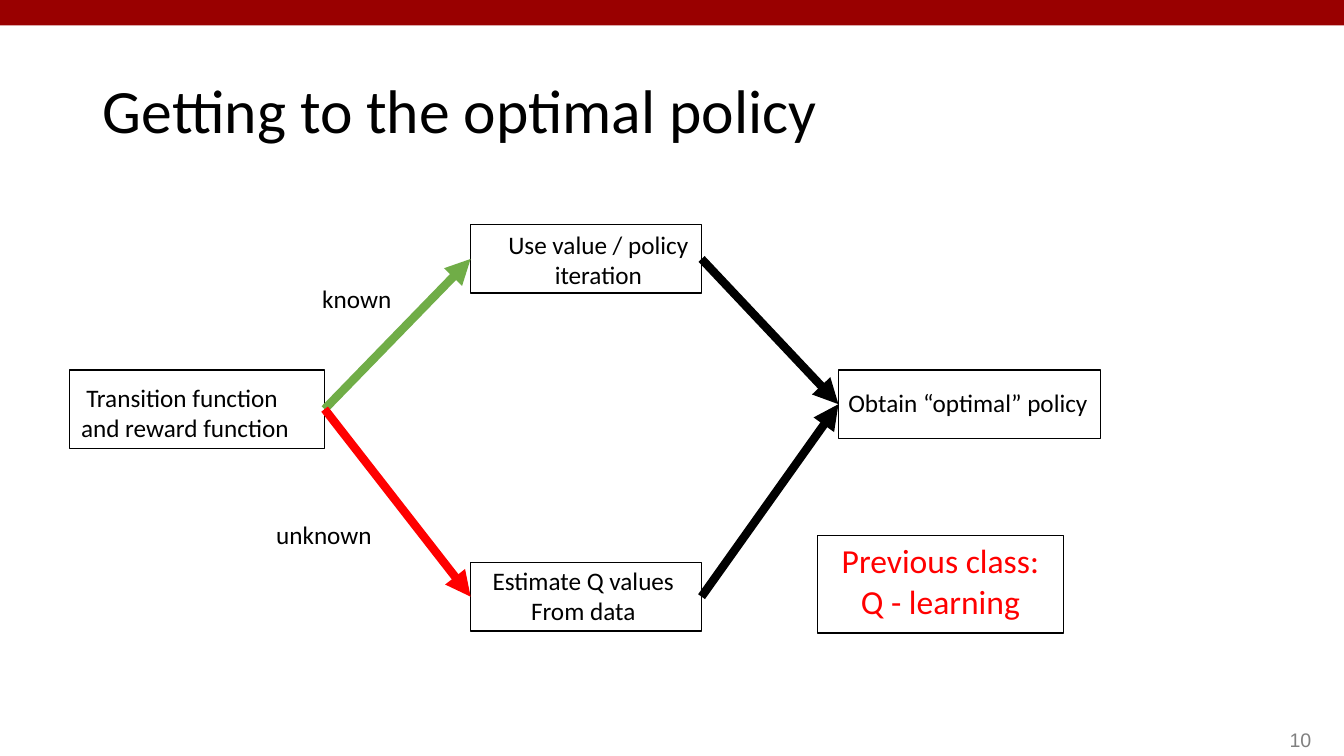
from lxml.etree import SubElement
from pptx import Presentation
from pptx.dml.color import RGBColor
from pptx.enum.shapes import MSO_CONNECTOR, MSO_SHAPE
from pptx.enum.text import MSO_ANCHOR, PP_ALIGN
from pptx.oxml.ns import qn
from pptx.util import Cm, Pt

BLACK = "000000"
RED = "FF0000"
GREEN = "70AD47"
LEFT_SITE, RIGHT_SITE = 1, 3


def colour(value):
    return RGBColor.from_string(value)


class FlowSlide:
    font = "Calibri"

    def __init__(self, deck):
        self.page = deck.slides.add_slide(deck.slide_layouts[5])

    def fill_text(self, box, text, size, ink, align, font=None):
        frame = box.text_frame
        frame.text = text
        for para in frame.paragraphs:
            para.alignment = align
            for span in para.runs:
                span.font.name = font or self.font
                span.font.size = Pt(size)
                span.font.color.rgb = colour(ink)
        return frame

    def title(self, text, left, top, width, height):
        box = self.page.shapes.title
        box.left, box.top, box.width, box.height = map(Cm, (left, top, width, height))
        frame = self.fill_text(box, text, 44, BLACK, PP_ALIGN.LEFT)
        frame.vertical_anchor = MSO_ANCHOR.MIDDLE
        frame.paragraphs[0].line_spacing = 0.9

    def rectangle(self, left, top, width, height):
        box = self.page.shapes.add_shape(
            MSO_SHAPE.RECTANGLE, *map(Cm, (left, top, width, height)))
        box.shadow.inherit = False
        return box

    def band(self, fill, *place):
        box = self.rectangle(*place)
        box.fill.solid()
        box.fill.fore_color.rgb = colour(fill)
        box.line.fill.background()

    def outline(self, *place):
        box = self.rectangle(*place)
        box.fill.background()
        box.line.color.rgb = colour(BLACK)
        box.line.width = Pt(1)
        return box

    def label(self, text, left, top, width, height, size=18, ink=BLACK,
              align=PP_ALIGN.CENTER, anchor=MSO_ANCHOR.TOP, wrap=False, font=None):
        box = self.page.shapes.add_textbox(*map(Cm, (left, top, width, height)))
        frame = self.fill_text(box, text, size, ink, align, font)
        frame.word_wrap = wrap
        frame.vertical_anchor = anchor

    def arrow(self, source, target, ink):
        connector = self.page.shapes.add_connector(MSO_CONNECTOR.STRAIGHT, 0, 0, 0, 0)
        connector.begin_connect(source, RIGHT_SITE)
        connector.end_connect(target, LEFT_SITE)
        connector.line.color.rgb = colour(ink)
        connector.line.width = Pt(6)
        properties = connector._element.spPr
        SubElement(properties.find(qn("a:ln")), qn("a:tailEnd"), type="triangle")
        SubElement(properties, qn("a:effectLst"))


def main():
    deck = Presentation()
    deck.slide_width, deck.slide_height = Cm(33.87), Cm(19.05)
    slide = FlowSlide(deck)

    slide.band("990000", 0, 0, 33.87, 0.64)
    slide.title("Getting to the optimal policy", 2.34, 1.02, 29.21, 3.68)

    model = slide.outline(1.75, 9.32, 6.43, 1.98)
    iteration = slide.outline(11.86, 5.66, 5.82, 1.73)
    estimate = slide.outline(11.86, 14.17, 5.82, 1.73)
    policy = slide.outline(21.13, 9.32, 6.6, 1.73)
    slide.outline(20.6, 13.49, 6.2, 2.46)

    for source, target, ink in (
        (model, iteration, GREEN),
        (model, estimate, RED),
        (iteration, policy, BLACK),
        (estimate, policy, BLACK),
    ):
        slide.arrow(source, target, ink)

    slide.label("Transition function \nand reward function", 1.75, 9.5, 5.82, 1.8)
    slide.label("Use value / policy iteration", 12.17, 5.66, 5.82, 1.8, wrap=True)
    slide.label("Estimate Q values\nFrom data", 11.79, 14.12, 5.82, 1.8)
    slide.label("Obtain “optimal” policy", 21.13, 9.63, 6.6, 1.02, align=PP_ALIGN.LEFT)
    slide.label("known", 7.87, 7.01, 2.29, 1.02, align=PP_ALIGN.LEFT)
    slide.label("unknown", 6.71, 12.95, 2.92, 1.02, align=PP_ALIGN.LEFT)
    slide.label("Previous class:\nQ - learning", 20.93, 13.49, 5.54, 2.31, size=24, ink=RED)
    slide.label("10", 26.24, 17.78, 7.06, 1.27, size=14, ink="808080",
                align=PP_ALIGN.RIGHT, anchor=MSO_ANCHOR.BOTTOM, wrap=True, font="Arial")

    deck.save("out.pptx")


if __name__ == "__main__":
    main()
